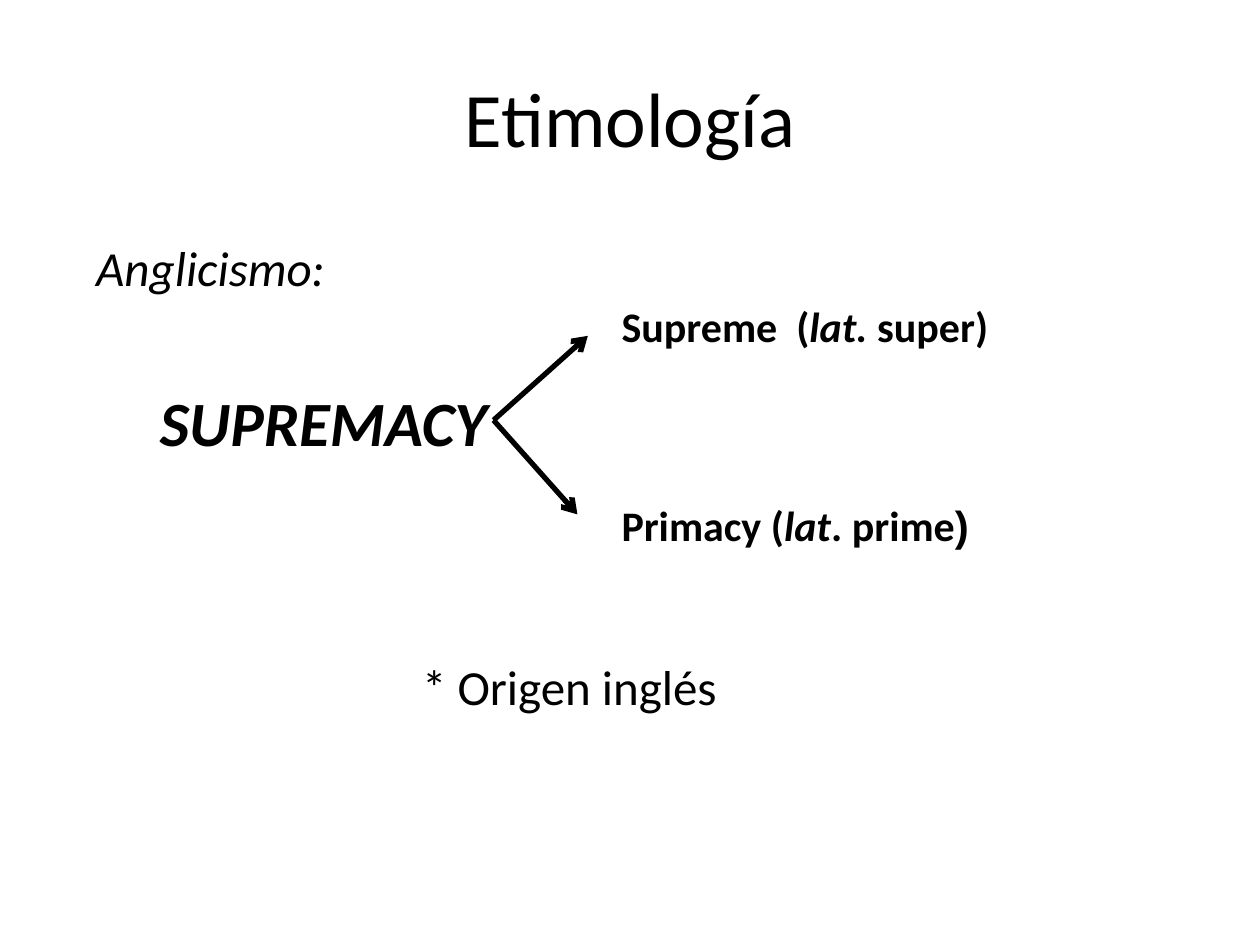
"""Build the slide on the etymology of the word "supremacy"."""
from lxml.etree import SubElement
from pptx import Presentation
from pptx.dml.color import RGBColor
from pptx.enum.shapes import MSO_CONNECTOR
from pptx.enum.text import MSO_ANCHOR, MSO_AUTO_SIZE, PP_ALIGN
from pptx.oxml.ns import qn
from pptx.util import Cm, Pt


def color(value):
    return RGBColor.from_string(value)


def write(p, runs, size, bold=False):
    for text, italic, font in runs:
        r = p.add_run()
        r.text = text
        r.font.name = font
        r.font.size = Pt(size)
        r.font.bold = bold
        r.font.italic = italic
        r.font.color.rgb = color("000000")


prs = Presentation()
prs.slide_width, prs.slide_height = Cm(25.4), Cm(19.05)
s = prs.slides.add_slide(prs.slide_layouts[1])

title = s.shapes.title
title.left, title.top, title.width, title.height = Cm(1.27), Cm(0.76), Cm(22.86), Cm(3.18)
title.text_frame.vertical_anchor = MSO_ANCHOR.MIDDLE
p = title.text_frame.paragraphs[0]
p.alignment = PP_ALIGN.CENTER
write(p, [("Etimología", False, "Calibri")], 44)

body = s.placeholders[1]
body.left, body.top, body.width, body.height = Cm(2.97), Cm(7.6), Cm(8.05), Cm(2.77)
body.text_frame.auto_size = MSO_AUTO_SIZE.NONE
p = body.text_frame.paragraphs[0]
p.space_before = Pt(0)
pPr = p._p.get_or_add_pPr()
pPr.set("marL", "0")
pPr.set("indent", "0")
SubElement(pPr, qn("a:buNone"))
write(p, [("SUPREMACY", True, "Calibri")], 36, True)

for x, y in [(11.85, 6.77), (11.64, 10.37)]:
    arrow = s.shapes.add_connector(MSO_CONNECTOR.STRAIGHT, Cm(9.95), Cm(8.47), Cm(x), Cm(y))
    arrow.line.color.rgb = color("000000")
    arrow.line.width = Pt(3)
    SubElement(arrow.line._get_or_add_ln(), qn("a:tailEnd"), type="arrow")
    SubElement(arrow._element.spPr, qn("a:effectLst"))

labels = [
    (12.28, 5.93, 11.85, 1.27, 24, True,
     [("Supreme  (", False, "Calibri"), ("lat. ", True, "Calibri"), ("super)", False, "Calibri")]),
    (12.28, 9.95, 8.04, 1.27, 24, True,
     [("Primacy (", False, "Calibri"), ("lat", True, "Calibri"),
      (". prime", False, "Calibri"), (")", False, "Arial")]),
    (1.69, 4.66, 7.62, 1.45, 28, False, [("Anglicismo:", True, "Calibri")]),
    (8.26, 13.12, 16.51, 1.45, 28, False, [("* Origen inglés", False, "Calibri")]),
]
for x, y, w, h, size, bold, runs in labels:
    tf = s.shapes.add_textbox(Cm(x), Cm(y), Cm(w), Cm(h)).text_frame
    tf.word_wrap = True
    tf.auto_size = MSO_AUTO_SIZE.SHAPE_TO_FIT_TEXT
    write(tf.paragraphs[0], runs, size, bold)

prs.save("out.pptx")
